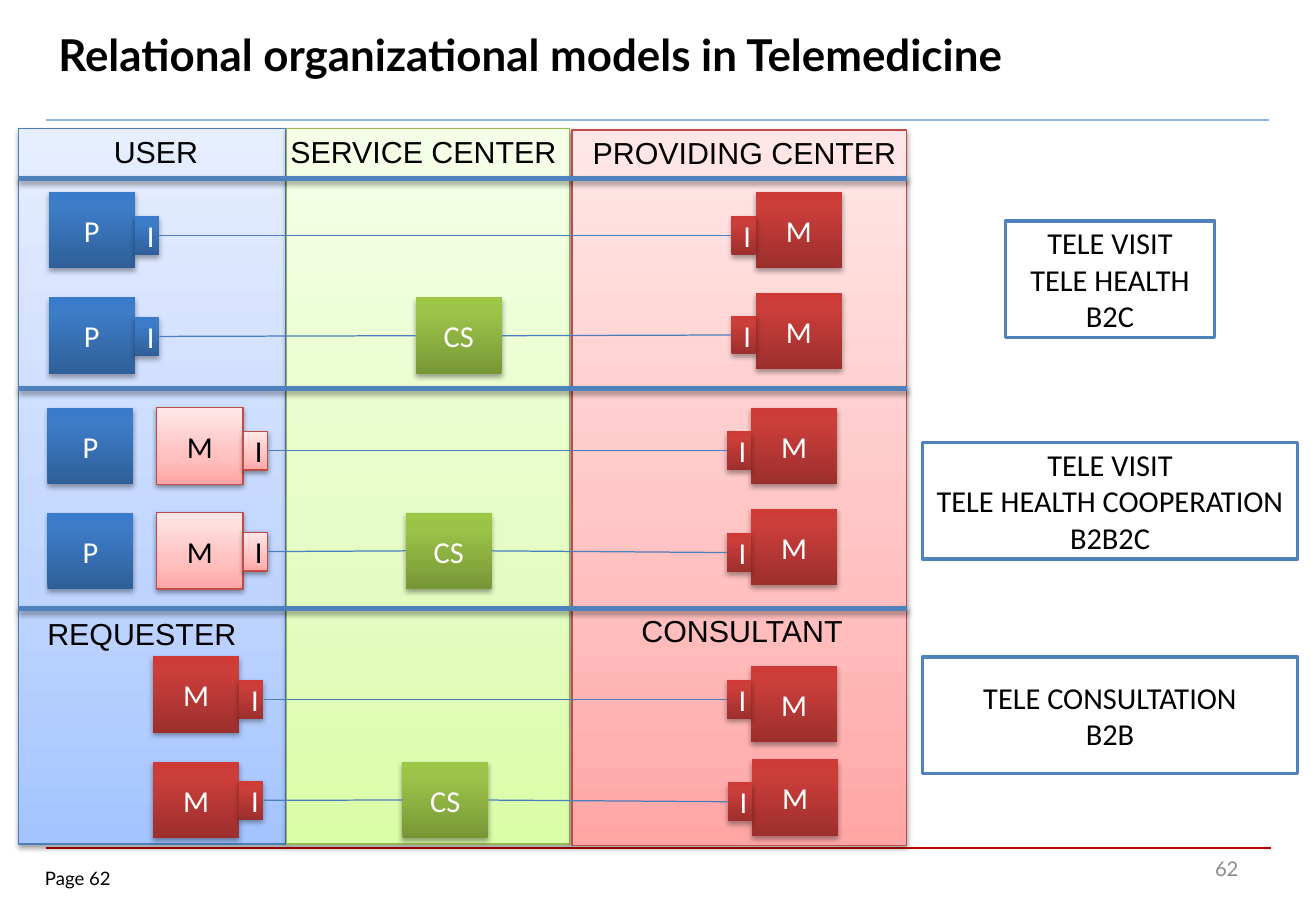
from collections import namedtuple
from copy import deepcopy
from dataclasses import dataclass

from lxml import etree
from pptx import Presentation
from pptx import util as u
from pptx.dml.color import RGBColor
from pptx.enum import shapes, text
from pptx.oxml.ns import qn

Box = namedtuple("Box", "left top width height")
Style = namedtuple("Style", "stops line ink")


@dataclass(frozen=True)
class Theme:
    ink: str = "000000"
    paper: str = "FFFFFF"
    muted: str = "8C8C8C"
    border: str = "4F81BD"
    link: str = "4B7EBC"
    title_rule: str = "8EB4E3"
    footer_rule: str = "C00000"
    title_font: str = "Lato"
    heading_font: str = "Arial"
    body_font: str = "Calibri"
    title_size: int = 26
    body_size: int = 18
    number_size: int = 12
    page_size: int = 11


T = Theme()
PALE, STRONG = (0, 0.35, 1), (0, 0.8, 1)


def gradient(positions, colors, line=None, ink=T.paper):
    return Style(list(zip(positions, colors.split())), line, ink)


USER_LANE = gradient(PALE, "A4C4FF BFD4FF E6EEFF", T.link, T.ink)
SERVICE_LANE = gradient(PALE, "DAFDA7 E4FCC2 F5FFE7", "98B955", T.ink)
PROVIDER_LANE = gradient(PALE, "FFA6A5 FFC0BF FFE7E7", "BF4C48", T.ink)
BLUE = gradient(STRONG, "2F5F99 3D7CC7 3A7CCB")
GREEN = gradient(STRONG, "779737 9BC348 9DC746")
RED = gradient(STRONG, "9C2F2D CB3E3A CE3B37")

NODE_W, NODE_H = 1.8, 1.6
PORT_W, PORT_H = 0.51, 0.81


def rgb(color):
    return RGBColor.from_string(color)


def emu(box):
    return [u.Cm(v) for v in box]


def write(s, value, font=T.body_font, size=T.body_size, color=T.ink, bold=False,
          align=text.PP_ALIGN.LEFT, anchor=text.MSO_ANCHOR.MIDDLE, wrap=True, inset=None):
    tf = s.text_frame
    tf.word_wrap = wrap
    tf.vertical_anchor = anchor
    if not wrap:
        tf.auto_size = text.MSO_AUTO_SIZE.SHAPE_TO_FIT_TEXT
    if inset is not None:
        tf.margin_left = tf.margin_top = tf.margin_right = tf.margin_bottom = u.Cm(inset)
    p = tf.paragraphs[0]
    p.text = value
    p.alignment = align
    for r in p.runs:
        r.font.name, r.font.size, r.font.bold = font, u.Pt(size), bold
        r.font.color.rgb = rgb(color)


def label(slide, box, value, **fmt):
    write(slide.shapes.add_textbox(*emu(box)), value, **fmt)


def cast_shadow(effects, alpha, distance):
    shadow = etree.SubElement(effects, qn("a:outerShdw"), blurRad="40000",
                              dist=str(distance), dir="5400000", rotWithShape="0")
    color = etree.SubElement(shadow, qn("a:srgbClr"), val=T.ink)
    etree.SubElement(color, qn("a:alpha"), val=str(alpha * 1000))


def rectangle(slide, box):
    s = slide.shapes.add_shape(shapes.MSO_SHAPE.RECTANGLE, *emu(box))
    s.shadow.inherit = False
    return s


def tile(slide, box, style, value=None):
    """Gradient rectangle with a soft shadow and an optional centred letter."""
    s = rectangle(slide, box)
    s.fill.gradient()
    s.fill.gradient_angle = 90
    stops = s._element.spPr.find(".//" + qn("a:gsLst"))
    stops.insert(0, deepcopy(stops[0]))
    for stop, (position, color) in zip(s.fill.gradient_stops, style.stops):
        stop.position, stop.color.rgb = position, rgb(color)
    if style.line:
        s.line.color.rgb, s.line.width = rgb(style.line), u.Pt(0.75)
    else:
        s.line.fill.background()
    effects = s._element.spPr.find(qn("a:effectLst"))
    cast_shadow(effects, *((38, 20000) if style.line else (35, 23000)))
    if value:
        write(s, value, color=style.ink, align=text.PP_ALIGN.CENTER)
    return s


def line(slide, x1, y1, x2, y2, color, width, shadow=False):
    c = slide.shapes.add_connector(shapes.MSO_CONNECTOR.STRAIGHT, *emu((x1, y1, x2, y2)))
    c.line.color.rgb, c.line.width = rgb(color), u.Pt(width)
    effects = etree.SubElement(c._element.spPr, qn("a:effectLst"))
    if shadow:
        cast_shadow(effects, 35, 23000)
    return c


def link(slide, start, end):
    c = line(slide, 0, 0, 1, 1, T.link, 0.75)
    c.begin_connect(start, 3)
    c.end_connect(end, 1)


def node(slide, x, y, style, value):
    return tile(slide, Box(x, y, NODE_W, NODE_H), style, value)


def port(slide, x, y, style):
    return tile(slide, Box(x, y, PORT_W, PORT_H), style, "I")


def frame(slide, box):
    """Title, rules and footer of the page."""
    label(slide, Box(0.97, 0.23, 25.2, 1.8), "Relational organizational models in Telemedicine",
          font=T.title_font, size=T.title_size, bold=True)
    line(slide, 0.97, 2.51, box.width - 0.99, 2.51, T.title_rule, 1.5)
    line(slide, 0.97, 17.73, box.width - 0.94, 17.73, T.footer_rule, 1)
    label(slide, Box(0.94, 18.14, 1.85, 0.56), "Page 62", font=T.title_font,
          size=T.page_size, anchor=text.MSO_ANCHOR.TOP, inset=0)
    label(slide, Box(19.71, 17.65, 6.43, 1.02), "62", font=T.title_font,
          size=T.number_size, color=T.muted, align=text.PP_ALIGN.RIGHT)


def lanes(slide, box):
    for x, y, width, style in ((0, 0, 5.59, USER_LANE), (5.61, 0, 5.92, SERVICE_LANE),
                               (11.58, 0.03, 6.99, PROVIDER_LANE)):
        tile(slide, Box(box.left + x, box.top + y, width, box.height), style)


def exchange(slide, box, top, user_nodes, port_dy, provider_x, provider_dy,
             provider_port_dy, service_x=None):
    """One row: user nodes, an optional service center and the provider, linked by ports."""
    y = box.top + top
    for x, style, value in user_nodes:
        node(slide, box.left + x, y, style, value)
    start = port(slide, box.left + x + NODE_W, y + port_dy, style)
    x = box.left + provider_x
    node(slide, x, y + provider_dy, RED, "M")
    end = port(slide, x - PORT_W, y + provider_port_dy, RED)
    if service_x is not None:
        service = node(slide, box.left + service_x, y, GREEN, "CS")
        link(slide, start, service)
        start = service
    link(slide, start, end)


def diagram(slide, box):
    lanes(slide, box)
    patient = [(0.64, BLUE, "P")]
    assisted = [(0.61, BLUE, "P"), (2.9, PROVIDER_LANE, "M")]
    requester = [(2.82, RED, "M")]
    for row in ((1.32, patient, 0.51, 15.42, 0, 0.51),
                (3.53, patient, 0.41, 15.42, -0.1, 0.38, 8.31),
                (5.84, assisted, 0.49, 15.32, 0, 0.49),
                (8.03, assisted, 0.41, 15.32, -0.08, 0.43, 8.1),
                (11.03, requester, 0.5, 15.32, 0.2, 0.5),
                (13.24, requester, 0.4, 15.34, -0.05, 0.43, 8.03)):
        exchange(slide, box, *row)
    for y in (1.04, 5.44, 10.04):
        line(slide, box.left, box.top + y, box.left + box.width, box.top + y,
             T.border, 3, shadow=True)
    for x, y, width, value in ((1.75, -0.02, 2.29, "USER"), (5.44, -0.02, 6.12, "SERVICE CENTER"),
                               (11.76, 0, 6.93, "PROVIDING CENTER"),
                               (0.36, 10.04, 4.5, "REQUESTER"), (12.78, 9.98, 4.78, "CONSULTANT")):
        label(slide, Box(box.left + x, box.top + y, width, 1.02), value,
              font=T.heading_font, anchor=text.MSO_ANCHOR.TOP, wrap=False)


def models(slide, box):
    """Boxes naming the service model of each band."""
    for y, width, value in ((0, 4.37, "TELE VISIT\nTELE HEALTH\nB2C"),
                            (4.63, box.width, "TELE VISIT\nTELE HEALTH COOPERATION\nB2B2C"),
                            (9.12, box.width, "TELE CONSULTATION\nB2B")):
        s = rectangle(slide, Box(box.left + (box.width - width) / 2, box.top + y, width, 2.44))
        s.fill.solid()
        s.fill.fore_color.rgb = rgb(T.paper)
        s.line.color.rgb, s.line.width = rgb(T.border), u.Pt(2)
        write(s, value, align=text.PP_ALIGN.CENTER)


def main():
    page = Box(0, 0, 27.51, 19.05)
    prs = Presentation()
    prs.slide_width, prs.slide_height = u.Cm(page.width), u.Cm(page.height)
    slide = prs.slides.add_slide(prs.slide_layouts[6])
    frame(slide, page)
    models(slide, Box(19.28, 4.62, 7.85, 11.56))
    diagram(slide, Box(0.38, 2.69, 18.59, 14.96))
    prs.save("out.pptx")


if __name__ == "__main__":
    main()
